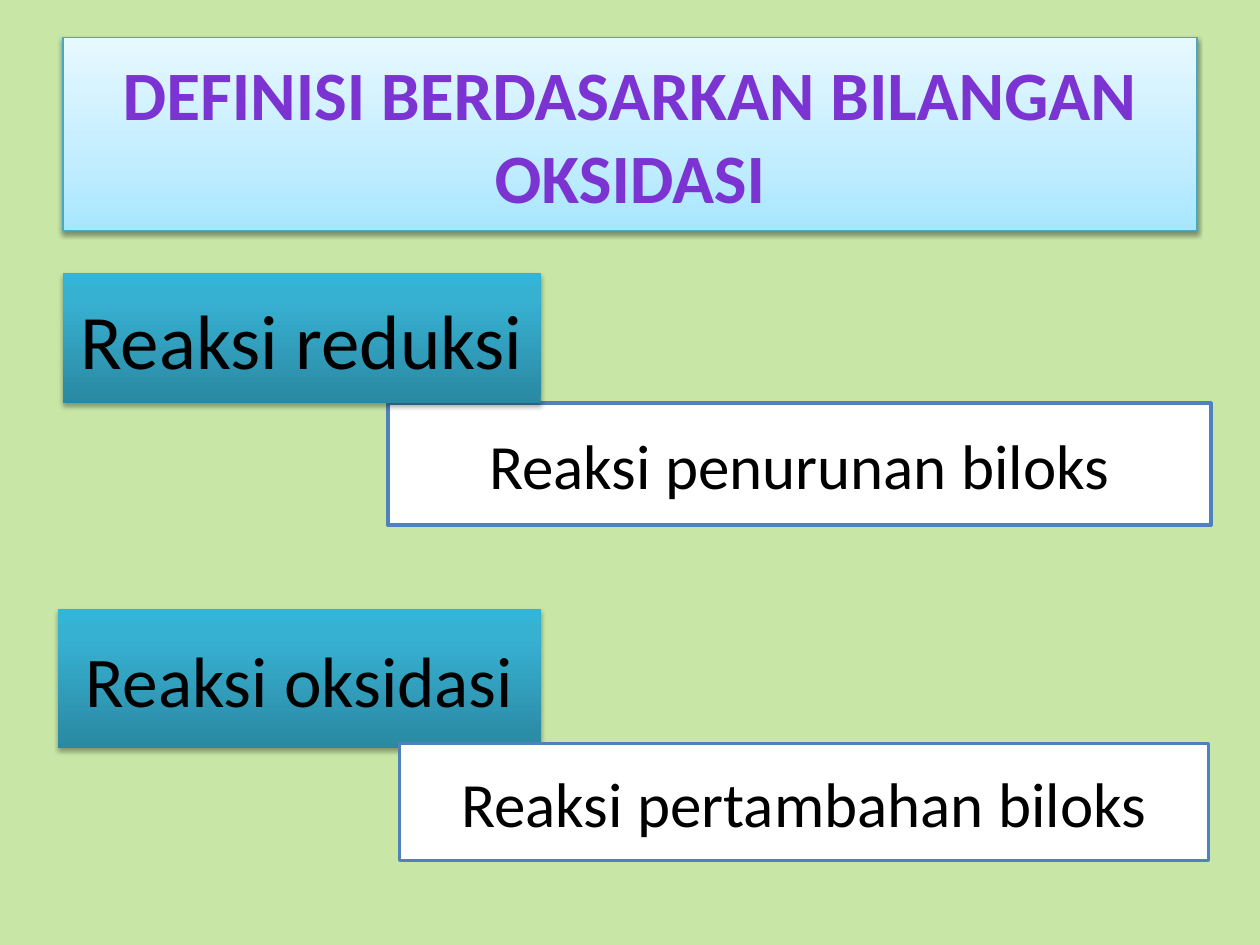
from lxml import etree
from pptx import Presentation
from pptx import util as u
from pptx.dml.color import RGBColor
from pptx.enum import shapes, text
from pptx.oxml.ns import qn

BACKGROUND = RGBColor(0xC8, 0xE7, 0xA7)
PURPLE = RGBColor(0x7B, 0x34, 0xD2)
BLACK = RGBColor(0, 0, 0)
WHITE = RGBColor(0xFF, 0xFF, 0xFF)
TITLE_LINE = RGBColor(0x46, 0xAA, 0xC5)
BLUE_LINE = RGBColor(0x4F, 0x81, 0xBD)

# Gradient stops run from the bottom of the box to its top: (percent, colour)
PALE_BLUE = [(0, RGBColor(0xA7, 0xE6, 0xFF)), (35, RGBColor(0xC1, 0xED, 0xFF)),
             (100, RGBColor(0xE7, 0xF8, 0xFF))]
TEAL = [(0, RGBColor(0x2A, 0x88, 0xA2)), (80, RGBColor(0x37, 0xB1, 0xD2)),
        (100, RGBColor(0x34, 0xB4, 0xD6))]

TITLE_STYLE = dict(gradient=PALE_BLUE, line=TITLE_LINE, line_width=0.75,
                   shadow=(38, 1.6), color=PURPLE, bold=True)
TERM_STYLE = dict(gradient=TEAL, shadow=(35, 1.8))
MEANING_STYLE = dict(line=BLUE_LINE, line_width=2, size=36, space_before=7.2)

# Wording, (left, top, width, height) in cm, style; back to front
BOXES = [
    ("DEFINISI BERDASARKAN BILANGAN OKSIDASI", (1.27, 0.76, 22.86, 3.89),
     dict(TITLE_STYLE, size=39.6)),
    ("Reaksi penurunan biloks", (7.82, 8.13, 16.59, 2.46), MEANING_STYLE),
    ("Reaksi reduksi", (1.27, 5.51, 9.63, 2.62), dict(TERM_STYLE, size=44)),
    ("Reaksi oksidasi", (1.17, 12.27, 9.73, 2.82), dict(TERM_STYLE, size=40.7)),
    ("Reaksi pertambahan biloks", (8.05, 14.99, 16.31, 2.36), MEANING_STYLE),
]


def add_color(parent, color):
    return etree.SubElement(parent, qn("a:srgbClr"), val=str(color))


def fill_upwards(box, stops):
    """Fill the box with a linear gradient of any number of stops."""
    box.fill.gradient()
    box.fill.gradient_angle = 90
    stop_list = box._element.spPr.find(qn("a:gradFill")).find(qn("a:gsLst"))
    for old_stop in list(stop_list):
        stop_list.remove(old_stop)
    for percent, color in stops:
        add_color(etree.SubElement(stop_list, qn("a:gs"), pos=str(percent * 1000)), color)


def drop_shadow(box, opacity, distance):
    effects = box._element.spPr.find(qn("a:effectLst"))
    outer = etree.SubElement(effects, qn("a:outerShdw"), blurRad=str(u.Pt(3.1)),
                             dist=str(u.Pt(distance)), dir="5400000", rotWithShape="0")
    etree.SubElement(add_color(outer, BLACK), qn("a:alpha"), val=str(opacity * 1000))


def write(box, wording, size, color=BLACK, bold=False, space_before=0):
    frame = box.text_frame
    frame.word_wrap = True
    frame.vertical_anchor = text.MSO_ANCHOR.MIDDLE
    paragraph = frame.paragraphs[0]
    paragraph.alignment = text.PP_ALIGN.CENTER
    paragraph.space_before = u.Pt(space_before)
    run = paragraph.add_run()
    run.text = wording
    run.font.name = "Calibri"
    run.font.size = u.Pt(size)
    run.font.bold = bold
    run.font.color.rgb = color


def add_box(slide, wording, place, gradient=None, line=None, line_width=0,
            shadow=None, **text_format):
    box = slide.shapes.add_shape(shapes.MSO_SHAPE.RECTANGLE, *map(u.Cm, place))
    if gradient:
        fill_upwards(box, gradient)
    else:
        box.fill.solid()
        box.fill.fore_color.rgb = WHITE
    if line:
        box.line.color.rgb = line
        box.line.width = u.Pt(line_width)
    else:
        box.line.fill.background()
    box.shadow.inherit = False
    if shadow:
        drop_shadow(box, *shadow)
    write(box, wording, **text_format)


def main():
    deck = Presentation()
    deck.slide_width, deck.slide_height = u.Cm(25.4), u.Cm(19.05)
    slide = deck.slides.add_slide(deck.slide_layouts[6])
    slide.background.fill.solid()
    slide.background.fill.fore_color.rgb = BACKGROUND
    for wording, place, style in BOXES:
        add_box(slide, wording, place, **style)
    deck.save("out.pptx")


if __name__ == "__main__":
    main()
